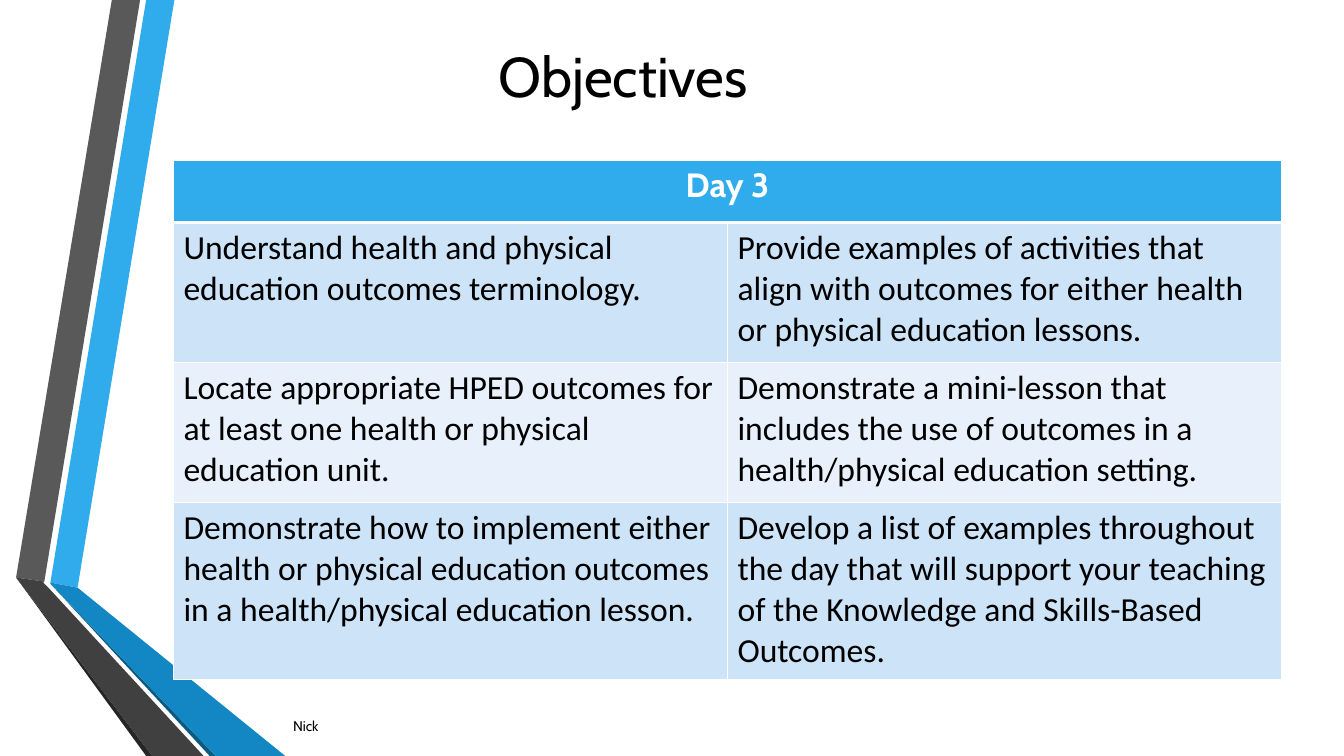
from lxml.etree import SubElement
from pptx import Presentation
from pptx.dml.color import RGBColor
from pptx.enum.text import MSO_ANCHOR, PP_ALIGN
from pptx.oxml.ns import qn
from pptx.util import Inches, Pt

WIDTH, HEIGHT = 13.33, 7.5
RIBBON = [
    ("30ACEC", [(0.5, 5.78), (0.77, 5.83), (1.73, 0), (1.45, 0)]),
    ("595959", [(1.39, 0), (1.11, 0), (0.16, 5.73), (0.44, 5.77)]),
    ("262626", [(0.16, 5.73), (1.45, HEIGHT), (1.51, HEIGHT)]),
    ("0C5A82", [(0.5, 5.79), (2.08, HEIGHT), (2.14, HEIGHT)]),
    ("1287C3", [(0.5, 5.79), (2.14, HEIGHT), (2.83, HEIGHT), (0.77, 5.83), (0.5, 5.78)]),
    ("404040", [(2.02, HEIGHT), (0.48, 5.83), (0.43, 5.78), (0.44, 5.77),
                (0.16, 5.73), (1.51, HEIGHT)]),
]
OBJECTIVES = [
    ("Understand health and physical education outcomes terminology.",
     "Provide examples of activities that align with outcomes for either health "
     "or physical education lessons."),
    ("Locate appropriate HPED outcomes for at least one health or physical education unit.",
     "Demonstrate a mini-lesson that includes the use of outcomes in a "
     "health/physical education setting."),
    ("Demonstrate how to implement either health or physical education outcomes in a "
     "health/physical education lesson.",
     "Develop a list of examples throughout the day that will support your teaching of the "
     "Knowledge and Skills-Based Outcomes."),
]
ROW_SHARES = [0.12, 0.27, 0.27, 0.34]
BANDS = ["CDE3F8", "E8F1FB"]


def rgb(value):
    """Return the colour for a hex string."""
    return RGBColor.from_string(value)


def write(tf, text, font="Cabin", size=24, color="000000", bold=False, align=PP_ALIGN.LEFT):
    """Write one formatted paragraph into a text frame."""
    tf.word_wrap = True
    p = tf.paragraphs[0]
    p.alignment = align
    r = p.add_run()
    r.text = text
    r.font.name, r.font.size, r.font.bold = font, Pt(size), bold
    r.font.color.rgb = rgb(color)


def add_text(s, box, text, **fmt):
    """Place a vertically centred text box."""
    tf = s.shapes.add_textbox(*map(Inches, box)).text_frame
    tf.vertical_anchor = MSO_ANCHOR.MIDDLE
    write(tf, text, **fmt)


def add_ribbon(s, left, top):
    """Draw the folded ribbon from the given corner."""
    for color, points in RIBBON:
        start, *rest = [(Inches(left + x), Inches(top + y)) for x, y in points]
        builder = s.shapes.build_freeform(*start)
        builder.add_line_segments(rest, close=True)
        sp = builder.convert_to_shape()
        sp.shadow.inherit = False
        sp.fill.solid()
        sp.fill.fore_color.rgb = rgb(color)
        sp.line.fill.background()


def style_cell(cell, fill, bottom=1, top=1):
    """Give a cell white borders and a fill."""
    tc_pr = cell._tc.get_or_add_tcPr()
    for side, width in (("L", 1), ("R", 1), ("T", top), ("B", bottom)):
        ln = SubElement(tc_pr, qn(f"a:ln{side}"), w=str(Pt(width)))
        SubElement(SubElement(ln, qn("a:solidFill")), qn("a:srgbClr"), val="FFFFFF")
    cell.fill.solid()
    cell.fill.fore_color.rgb = rgb(fill)


def add_objectives(s, box):
    """Build the objectives table with a merged heading row."""
    left, top, width, height = box
    rows, cols = len(ROW_SHARES), len(OBJECTIVES[0])
    table = s.shapes.add_table(rows, cols, *map(Inches, box)).table
    for row, share in zip(table.rows, ROW_SHARES):
        row.height = Inches(height * share)
    for col in table.columns:
        col.width = Inches(width / cols)
    table.cell(0, 0).merge(table.cell(0, cols - 1))
    for c in range(cols):
        style_cell(table.cell(0, c), "30ACEC", bottom=3)
    write(table.cell(0, 0).text_frame, "Day 3", color="FFFFFF", bold=True,
          align=PP_ALIGN.CENTER)
    for i, pair in enumerate(OBJECTIVES):
        for c, text in enumerate(pair):
            cell = table.cell(i + 1, c)
            style_cell(cell, BANDS[i % 2], top=1 if i else 3)
            write(cell.text_frame, text, font="Calibri")


def main():
    """Build and save the objectives slide."""
    prs = Presentation()
    prs.slide_width, prs.slide_height = Inches(WIDTH), Inches(HEIGHT)
    s = prs.slides.add_slide(prs.slide_layouts[6])
    add_ribbon(s, 0, 0)
    add_text(s, (1.72, 0.25, 8.92, 0.99), "Objectives", size=40, align=PP_ALIGN.CENTER)
    add_objectives(s, (1.72, 1.59, 10.99, 5.15))
    add_text(s, (2.81, 7.03, 7.75, 0.35), "Nick", size=10)
    prs.save("out.pptx")


if __name__ == "__main__":
    main()
